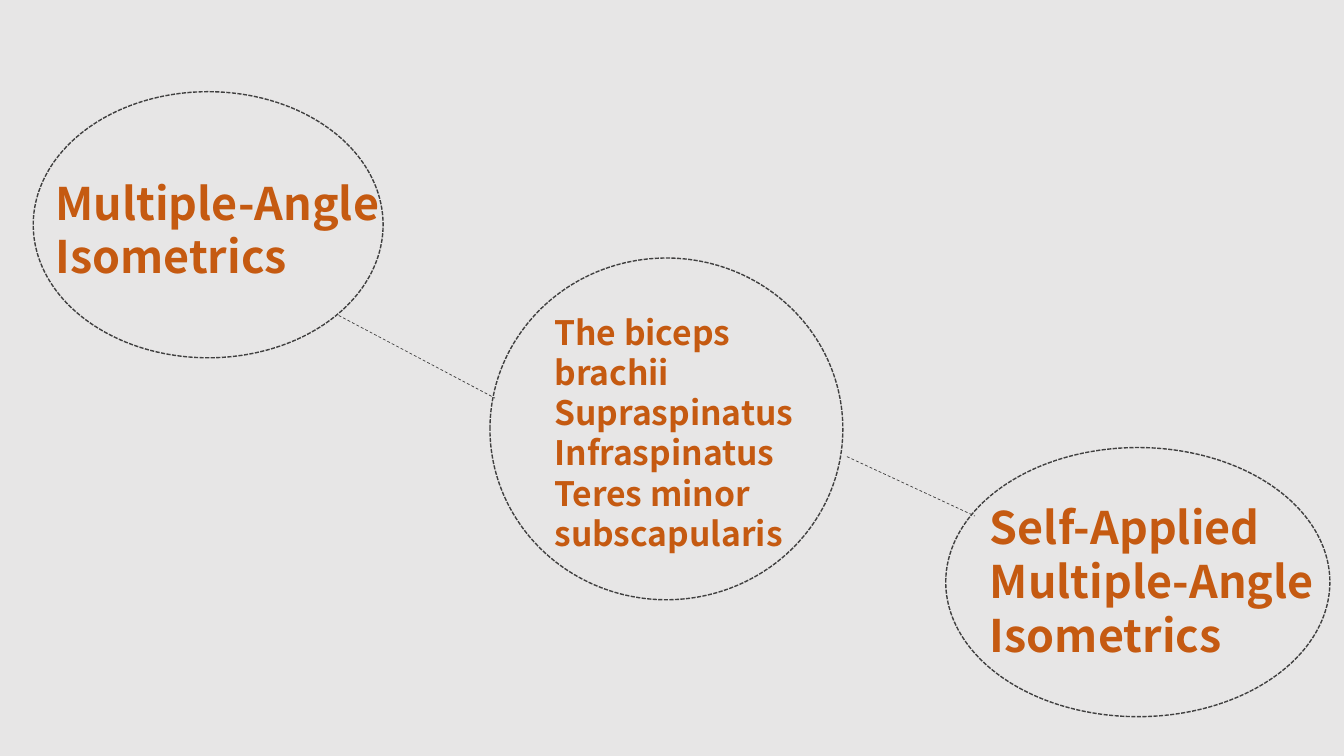
from lxml import etree
from pptx import Presentation
from pptx.dml.color import RGBColor
from pptx.enum.dml import MSO_LINE_DASH_STYLE as DASH
from pptx.enum.shapes import MSO_CONNECTOR, MSO_SHAPE
from pptx.enum.text import MSO_AUTO_SIZE
from pptx.oxml.ns import qn
from pptx.util import Pt

EMU_PER_PX = 9144  # 100 px to the inch
PAGE_SIZE = (1333, 750)

GREY = RGBColor(0xE7, 0xE6, 0xE6)
CHARCOAL = RGBColor(0x40, 0x40, 0x40)
ORANGE = RGBColor(0xC5, 0x5A, 0x11)
BLACK = RGBColor(0, 0, 0)
HEADING_FONT = "Noto Sans CJK SC"
GAP_FONT = "Calibri"

# left, top, width, height
BUBBLES = [
    (486, 256, 350, 339),
    (33, 91, 347, 264),
    (938, 444, 381, 267),
]
# start x, start y, end x, end y
LINKS = [
    (336, 313, 491, 395),
    (840, 453, 967, 512),
]
# box, text size, size of the spaces between phrases, paragraphs of phrases
LABELS = [
    ((45, 169, 346, 118), 32, 11, [["Multiple-Angle", "Isometrics"]]),
    ((972, 491, 361, 172), 32, 18,
     [["Self-Applied", "Multiple-Angle", "Isometrics"]]),
    ((540, 304, 265, 252), 24, 18,
     [["The biceps brachii"], ["Supraspinatus"], ["Infraspinatus"],
      ["Teres minor"], ["subscapularis"]]),
]


def emu(lengths):
    return [length * EMU_PER_PX for length in lengths]


def style_line(line, width, dash):
    line.color.rgb = CHARCOAL
    line.width = Pt(width)
    line.dash_style = dash


def add_bubble(page, box):
    bubble = page.shapes.add_shape(MSO_SHAPE.OVAL, *emu(box))
    bubble.shadow.inherit = False
    bubble.fill.background()
    style_line(bubble.line, 1, DASH.SQUARE_DOT)


def add_link(page, ends):
    link = page.shapes.add_connector(MSO_CONNECTOR.STRAIGHT, *emu(ends))
    style_line(link.line, 0.5, DASH.DASH)
    etree.SubElement(link._element.spPr, qn("a:effectLst"))


def add_span(para, text, size, name, color, bold):
    span = para.add_run()
    span.text = text
    font = span.font
    font.size, font.name, font.bold = Pt(size), name, bold
    font.color.rgb = color


def add_label(page, box, size, gap_size, paragraphs):
    """Add a text box whose phrases are parted by small plain spaces."""
    frame = page.shapes.add_textbox(*emu(box)).text_frame
    frame.word_wrap = True
    frame.auto_size = MSO_AUTO_SIZE.SHAPE_TO_FIT_TEXT
    for row, phrases in enumerate(paragraphs):
        para = frame.add_paragraph() if row else frame.paragraphs[0]
        for order, phrase in enumerate(phrases):
            if order:
                add_span(para, " ", gap_size, GAP_FONT, BLACK, False)
            add_span(para, phrase, size, HEADING_FONT, ORANGE, True)


def main():
    deck = Presentation()
    deck.slide_width, deck.slide_height = emu(PAGE_SIZE)
    page = deck.slides.add_slide(deck.slide_layouts[6])
    page.background.fill.solid()
    page.background.fill.fore_color.rgb = GREY
    for box in BUBBLES:
        add_bubble(page, box)
    for ends in LINKS:
        add_link(page, ends)
    for label in LABELS:
        add_label(page, *label)
    deck.save("out.pptx")


if __name__ == "__main__":
    main()
